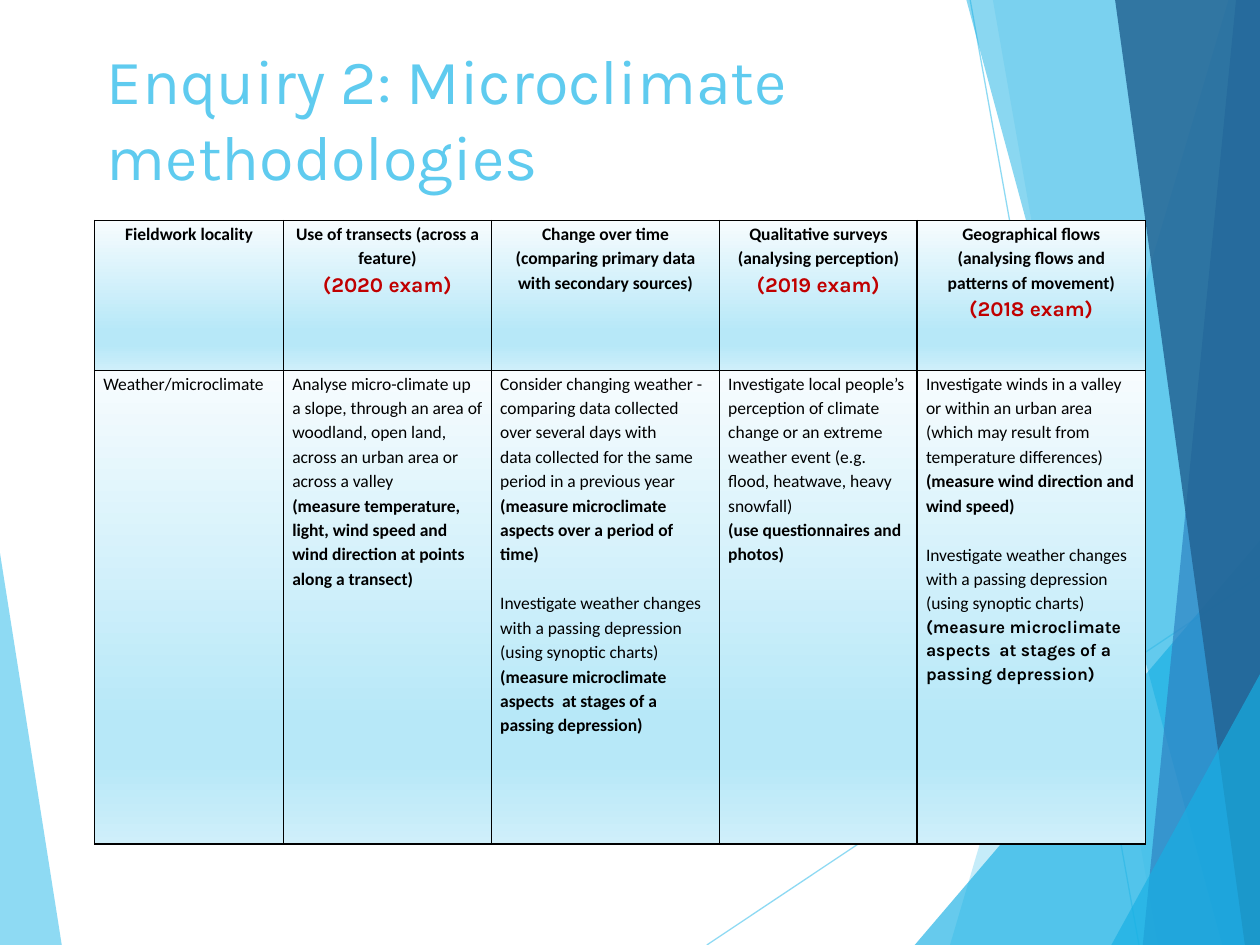
from lxml.etree import SubElement
from pptx import Presentation
from pptx.dml.color import RGBColor
from pptx.enum.shapes import MSO_CONNECTOR
from pptx.enum.text import MSO_ANCHOR, PP_ALIGN
from pptx.oxml.ns import qn
from pptx.util import Inches, Pt

SKY = RGBColor(0x5F, 0xCB, 0xEF)
CYAN = RGBColor(0x17, 0xB0, 0xE4)
BLUE = RGBColor(0x2E, 0x83, 0xC3)
NAVY = RGBColor(0x22, 0x62, 0x92)
RED = RGBColor(0xC0, 0x00, 0x00)
BLACK = RGBColor(0, 0, 0)
# Cell gradient: position in percent, colour
STOPS = [(0, RGBColor(0xF7, 0xFC, 0xFE)), (74, RGBColor(0xB7, 0xE8, 0xF8)),
         (83, RGBColor(0xB7, 0xE8, 0xF8)), (100, RGBColor(0xCF, 0xEF, 0xFA))]

TITLE = "Enquiry 2: Microclimate methodologies"

# Backdrop: lines (from, to), then facets (colour, opacity, corners)
LINES = [((5.61, 7.5), (10, 4.57)), ((7.7, 0), (9.04, 7.5))]
FACETS = [
    (SKY, 70, [(0, 4.39), (0.49, 7.5), (0, 7.5)]),
    (SKY, 36, [(9.75, 0), (7.54, 7.5), (10, 7.5), (10, 0)]),
    (SKY, 20, [(7.88, 0), (9.19, 7.5), (10, 7.5), (10, 0)]),
    (CYAN, 66, [(7.26, 7.5), (10, 4.29), (10, 7.5)]),
    (CYAN, 50, [(7.67, 0), (9.7, 7.5), (10, 7.5), (10, 0)]),
    (BLUE, 70, [(9.81, 0), (9.07, 7.5), (10, 7.5), (10, 0)]),
    (NAVY, 82, [(8.85, 0), (9.88, 7.5), (10, 7.5), (10, 0)]),
    (CYAN, 66, [(8.82, 7.5), (10, 5.35), (10, 7.5)]),
]

# Table: each cell is a list of (text, format) paragraphs
COLS = [1.5, 1.65, 1.81, 1.57, 1.81]
ROWS = [1.19, 3.76]
BOLD = {"bold": True}
HEAD = {"bold": True, "align": PP_ALIGN.CENTER}
EXAM = {**HEAD, "size": 12, "font": "Karla", "color": RED}
NEXT = {"before": 14}
FRONT = ("Investigate weather changes with a passing depression "
         "(using synoptic charts)")
STAGES = "(measure microclimate aspects  at stages of a passing depression)"
CELLS = [
    [
        [("Fieldwork locality", HEAD)],
        [("Use of transects (across a feature)", HEAD), ("(2020 exam)", EXAM)],
        [("Change over time (comparing primary data with secondary sources)",
          HEAD)],
        [("Qualitative surveys (analysing perception)", HEAD),
         ("(2019 exam)", EXAM)],
        [("Geographical flows (analysing flows and patterns of movement)",
          HEAD), ("(2018 exam)", EXAM)],
    ],
    [
        [("Weather/microclimate", {})],
        [("Analyse micro-climate up a slope, through an area of woodland, "
          "open land, across an urban area or across a valley", {}),
         ("(measure temperature, light, wind speed and wind direction at "
          "points along a transect)", BOLD)],
        [("Consider changing weather - comparing data collected over "
          "several days with", {}),
         ("data collected for the same period in a previous year", {}),
         ("(measure microclimate aspects over a period of time)", BOLD),
         (FRONT, NEXT), (STAGES, BOLD)],
        [("Investigate local people’s perception of climate change or an "
          "extreme weather event (e.g. flood, heatwave, heavy snowfall)", {}),
         ("(use questionnaires and photos)", BOLD)],
        [("Investigate winds in a valley or within an urban area (which may "
          "result from temperature differences)", {}),
         ("(measure wind direction and wind speed)", BOLD),
         (FRONT, NEXT), (STAGES, {**BOLD, "font": "Karla"})],
    ],
]


def write(para, text, size=10, font="Calibri", color=BLACK, bold=False,
          align=PP_ALIGN.LEFT, space=1.15, before=0):
    para.alignment = align
    para.line_spacing = space
    para.space_before = Pt(before)
    run = para.add_run()
    run.text = text
    run.font.size = Pt(size)
    run.font.name = font
    run.font.bold = bold
    run.font.color.rgb = color


def fade(shape, percent):
    """Set the opacity of every colour in the shape's own format."""
    for node in shape.element.spPr.iter(qn("a:srgbClr")):
        SubElement(node, qn("a:alpha"), val=str(percent * 1000))


def dress(cell):
    """Give a cell black borders and the gradient fill."""
    props = cell._tc.get_or_add_tcPr()
    for side in ("lnL", "lnR", "lnT", "lnB"):
        edge = SubElement(props, qn("a:" + side), w=str(Pt(1)))
        solid = SubElement(edge, qn("a:solidFill"))
        SubElement(solid, qn("a:srgbClr"), val=str(BLACK))
    grad = SubElement(props, qn("a:gradFill"), rotWithShape="1")
    stops = SubElement(grad, qn("a:gsLst"))
    for pos, color in STOPS:
        stop = SubElement(stops, qn("a:gs"), pos=str(pos * 1000))
        SubElement(stop, qn("a:srgbClr"), val=str(color))
    SubElement(grad, qn("a:lin"), ang=str(90 * 60000), scaled="0")


def add_backdrop(slide):
    for start, end in LINES:
        line = slide.shapes.add_connector(
            MSO_CONNECTOR.STRAIGHT, *map(Inches, start + end))
        line.line.color.rgb = SKY
        line.line.width = Pt(0.75)
        fade(line, 70)
        SubElement(line.element.spPr, qn("a:effectLst"))
    for color, opacity, points in FACETS:
        first, *rest = [(Inches(x), Inches(y)) for x, y in points]
        path = slide.shapes.build_freeform(*first)
        path.add_line_segments(rest, close=True)
        facet = path.convert_to_shape()
        facet.shadow.inherit = False
        facet.fill.solid()
        facet.fill.fore_color.rgb = color
        facet.line.fill.background()
        fade(facet, opacity)


def add_table(slide):
    table = slide.shapes.add_table(
        len(ROWS), len(COLS), Inches(0.75), Inches(1.75),
        Inches(sum(COLS)), Inches(sum(ROWS))).table
    table.first_row = table.horz_banding = False
    for col, width in zip(table.columns, COLS):
        col.width = Inches(width)
    for row, height, texts in zip(table.rows, ROWS, CELLS):
        row.height = Inches(height)
        for cell, paras in zip(row.cells, texts):
            cell.margin_left = cell.margin_right = Inches(0.07)
            cell.margin_top = cell.margin_bottom = 0
            dress(cell)
            frame = cell.text_frame
            for i, (text, style) in enumerate(paras):
                para = frame.add_paragraph() if i else frame.paragraphs[0]
                write(para, text, **style)


def add_title(slide):
    box = slide.shapes.add_textbox(
        Inches(0.75), Inches(0.21), Inches(6.94), Inches(1.44))
    frame = box.text_frame
    frame.word_wrap = True
    frame.vertical_anchor = MSO_ANCHOR.MIDDLE
    write(frame.paragraphs[0], TITLE, size=36, font="Karla", color=SKY,
          space=1.0)


def main():
    deck = Presentation()
    deck.slide_width, deck.slide_height = Inches(10), Inches(7.5)
    slide = deck.slides.add_slide(deck.slide_layouts[6])
    add_backdrop(slide)
    add_table(slide)
    add_title(slide)
    deck.save("out.pptx")


if __name__ == "__main__":
    main()
